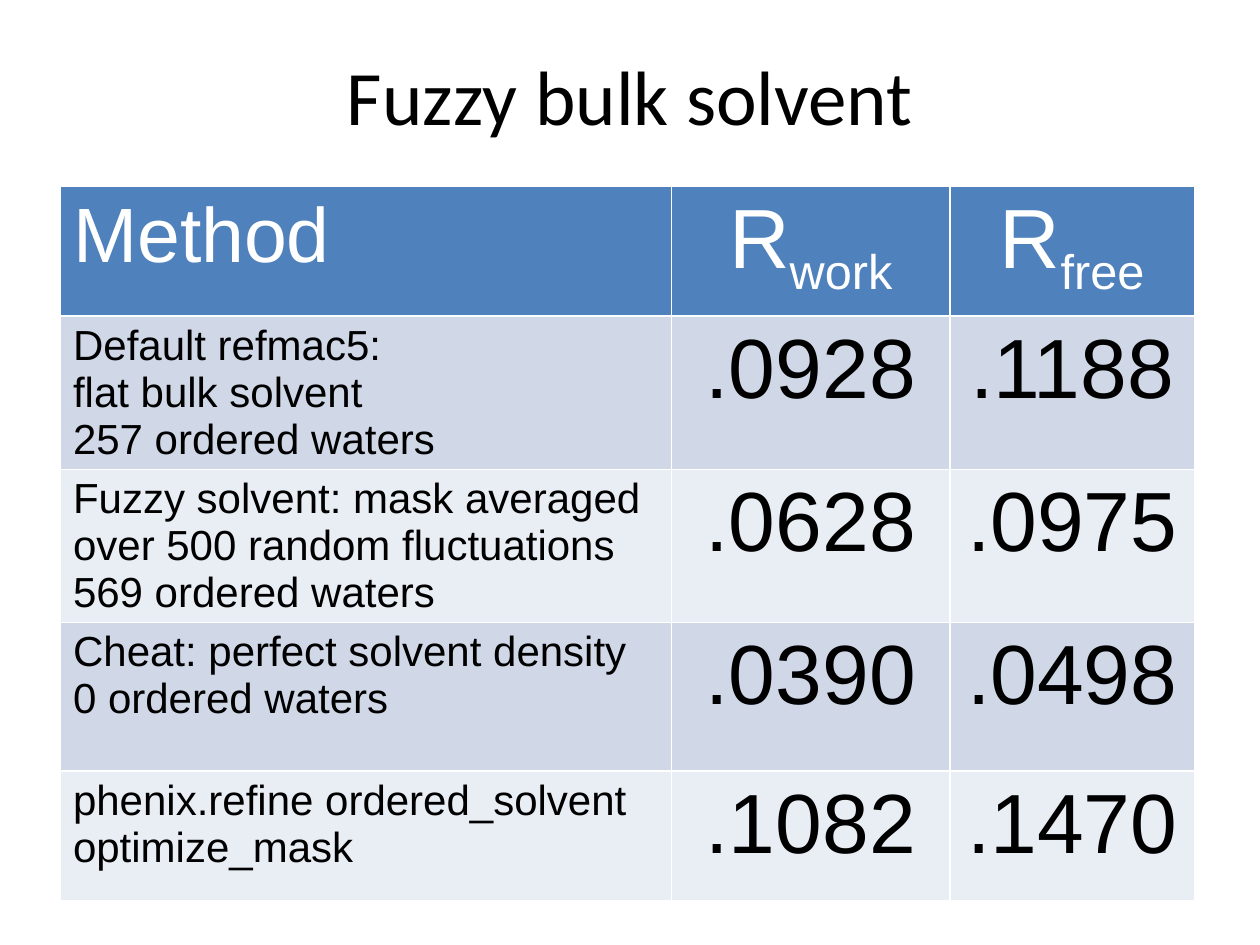
from pptx import Presentation
from pptx import util as u
from pptx.dml.color import RGBColor
from pptx.enum import text

TITLE = "Fuzzy bulk solvent"
HEADINGS = [("Method", ""), ("R", "work"), ("R", "free")]
RESULTS = [
    (["Default refmac5:", "flat bulk solvent", "257 ordered waters"], ".0928", ".1188"),
    (["Fuzzy solvent: mask averaged over 500 random fluctuations",
      "569 ordered waters"], ".0628", ".0975"),
    (["Cheat: perfect solvent density", "0 ordered waters"], ".0390", ".0498"),
    (["phenix.refine ordered_solvent", "optimize_mask"], ".1082", ".1470"),
]
COLUMN_WIDTHS = [4.85, 2.21, 1.94]
ROW_HEIGHTS = [1.03, 1.18, 1.18, 1.18, 1.03]
HEADER_FILL = "4F81BD"
BAND_FILLS = ["D0D8E8", "E9EDF4"]


def style(font, size, color, name="Arial"):
    font.name = name
    font.size = u.Pt(size)
    font.bold = False
    font.color.rgb = RGBColor.from_string(color)


def fill_cell(cell, color):
    cell.fill.solid()
    cell.fill.fore_color.rgb = RGBColor.from_string(color)


def write_cell(cell, lines, size, color, centered):
    cell.text_frame.text = "\n".join(lines)
    for paragraph in cell.text_frame.paragraphs:
        if centered:
            paragraph.alignment = text.PP_ALIGN.CENTER
        style(paragraph.font, size, color)


def main():
    deck = Presentation()
    deck.slide_width, deck.slide_height = u.Inches(10), u.Inches(7.5)
    slide = deck.slides.add_slide(deck.slide_layouts[5])

    title = slide.shapes.title
    title.left, title.top = u.Inches(0.5), u.Inches(0.13)
    title.width, title.height = u.Inches(9), u.Inches(1.25)
    title.text_frame.text = TITLE
    style(title.text_frame.paragraphs[0].font, 44, "000000", "Calibri")

    table = slide.shapes.add_table(
        len(ROW_HEIGHTS), len(COLUMN_WIDTHS), u.Inches(0.48), u.Inches(1.48),
        u.Inches(sum(COLUMN_WIDTHS)), u.Inches(sum(ROW_HEIGHTS))).table
    for column, width in zip(table.columns, COLUMN_WIDTHS):
        column.width = u.Inches(width)
    for row, height in zip(table.rows, ROW_HEIGHTS):
        row.height = u.Inches(height)

    for col, (heading, subscript) in enumerate(HEADINGS):
        cell = table.cell(0, col)
        fill_cell(cell, HEADER_FILL)
        write_cell(cell, [heading], 48 if subscript else 44, "FFFFFF", col > 0)
        if subscript:
            run = cell.text_frame.paragraphs[0].add_run()
            run.text = subscript
            run.font._element.set("baseline", "-25000")

    for row, (method, *r_factors) in enumerate(RESULTS, start=1):
        columns = [method] + [[value] for value in r_factors]
        for col, lines in enumerate(columns):
            cell = table.cell(row, col)
            fill_cell(cell, BAND_FILLS[(row - 1) % 2])
            write_cell(cell, lines, 48 if col else 24, "000000", col > 0)

    deck.save("out.pptx")


if __name__ == "__main__":
    main()
